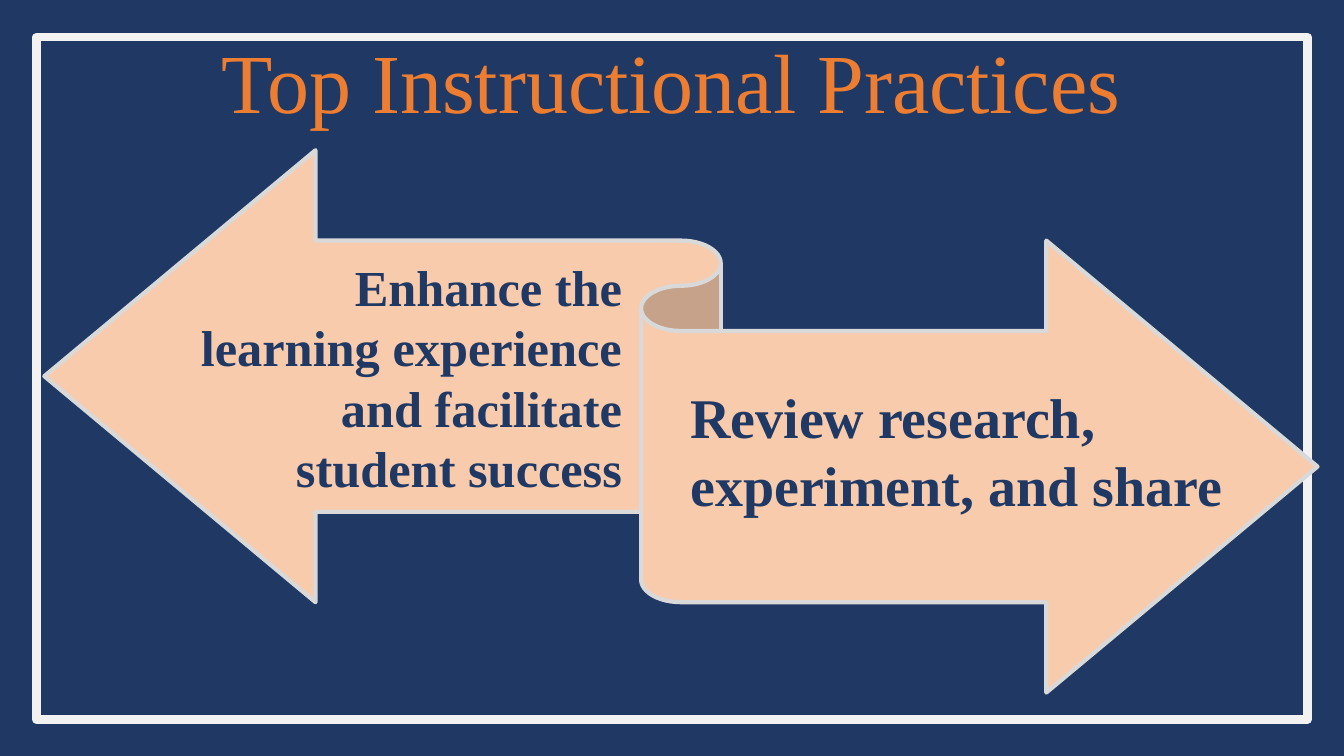
from dataclasses import dataclass

from pptx import Presentation
from pptx.dml.color import RGBColor
from pptx.enum.shapes import MSO_SHAPE
from pptx.enum.text import MSO_ANCHOR, MSO_AUTO_SIZE, PP_ALIGN
from pptx.shapes.autoshape import Shape
from pptx.slide import Slide
from pptx.util import Pt

RECTANGLE, RIBBON = MSO_SHAPE.RECTANGLE, MSO_SHAPE.LEFT_RIGHT_RIBBON
LEFT, CENTER, RIGHT = PP_ALIGN.LEFT, PP_ALIGN.CENTER, PP_ALIGN.RIGHT
TOP, MIDDLE = MSO_ANCHOR.TOP, MSO_ANCHOR.MIDDLE
FIXED, GROW = MSO_AUTO_SIZE.NONE, MSO_AUTO_SIZE.SHAPE_TO_FIT_TEXT

COLORS = {
    "navy": "203864",
    "orange": "ED7D31",
    "peach": "F8CBAD",
    "frame": "F2F2F2",
    "outline": "D9D9D9",
}
FONT = "Times New Roman"


@dataclass(frozen=True)
class Bounds:
    left: float
    top: float
    width: float
    height: float

    def lengths(self) -> list[Pt]:
        return [Pt(v) for v in (self.left, self.top, self.width, self.height)]


@dataclass(frozen=True)
class Panel:
    kind: MSO_SHAPE
    bounds: Bounds
    fill: str
    line: str
    line_width: float


@dataclass(frozen=True)
class Label:
    text: str
    bounds: Bounds
    size: float
    align: PP_ALIGN


FRAME = Panel(RECTANGLE, Bounds(26, 26.6, 908, 487.4), "navy", "frame", 6)
ARROWS = Panel(RIBBON, Bounds(31.7, 107.3, 909.4, 387.4), "peach", "outline", 3)

TITLE = Label("Top Instructional Practices", Bounds(72, 12.2, 815, 99.4), 60, CENTER)
ARROW_LABELS = [
    Label("Enhance the learning experience and facilitate student success",
          Bounds(117.4, 179.3, 334.1, 181.4), 36, RIGHT),
    Label("Review research, experiment, and share",
          Bounds(486, 270, 421.2, 104.4), 40, LEFT),
]


def rgb(name: str) -> RGBColor:
    return RGBColor.from_string(COLORS[name])


def apply_format(target: object, values: dict[str, object]) -> None:
    for name, value in values.items():
        setattr(target, name, value)


def add_panel(page: Slide, panel: Panel) -> Shape:
    shape = page.shapes.add_shape(panel.kind, *panel.bounds.lengths())
    shape.shadow.inherit = False
    shape.fill.solid()
    shape.fill.fore_color.rgb = rgb(panel.fill)
    shape.line.color.rgb = rgb(panel.line)
    shape.line.width = Pt(panel.line_width)
    return shape


def write_label(box: Shape, label: Label, color: str, bold: bool,
                frame_format: dict[str, object], spacing: float) -> None:
    left, top, width, height = label.bounds.lengths()
    apply_format(box, {"left": left, "top": top, "width": width, "height": height})
    apply_format(box.text_frame, {"word_wrap": True, **frame_format})
    para = box.text_frame.paragraphs[0]
    apply_format(para, {"alignment": label.align, "line_spacing": spacing})
    span = para.add_run()
    span.text = label.text
    apply_format(span.font, {"name": FONT, "size": Pt(label.size), "bold": bold})
    span.font.color.rgb = rgb(color)


def main() -> None:
    deck = Presentation()
    deck.slide_width, deck.slide_height = Pt(960), Pt(540)
    page = deck.slides.add_slide(deck.slide_layouts[5])
    page.background.fill.solid()
    page.background.fill.fore_color.rgb = rgb("navy")

    # Title, with the frame behind it
    title = page.shapes.title
    write_label(title, TITLE, "orange", False,
                {"auto_size": FIXED, "vertical_anchor": MIDDLE}, 0.9)
    frame = add_panel(page, FRAME)
    title.element.addprevious(frame.element)

    # Two-way ribbon and its labels
    add_panel(page, ARROWS)
    for label in ARROW_LABELS:
        box = page.shapes.add_textbox(*label.bounds.lengths())
        write_label(box, label, "navy", True,
                    {"auto_size": GROW, "vertical_anchor": TOP}, 1.0)

    deck.save("out.pptx")


if __name__ == "__main__":
    main()
